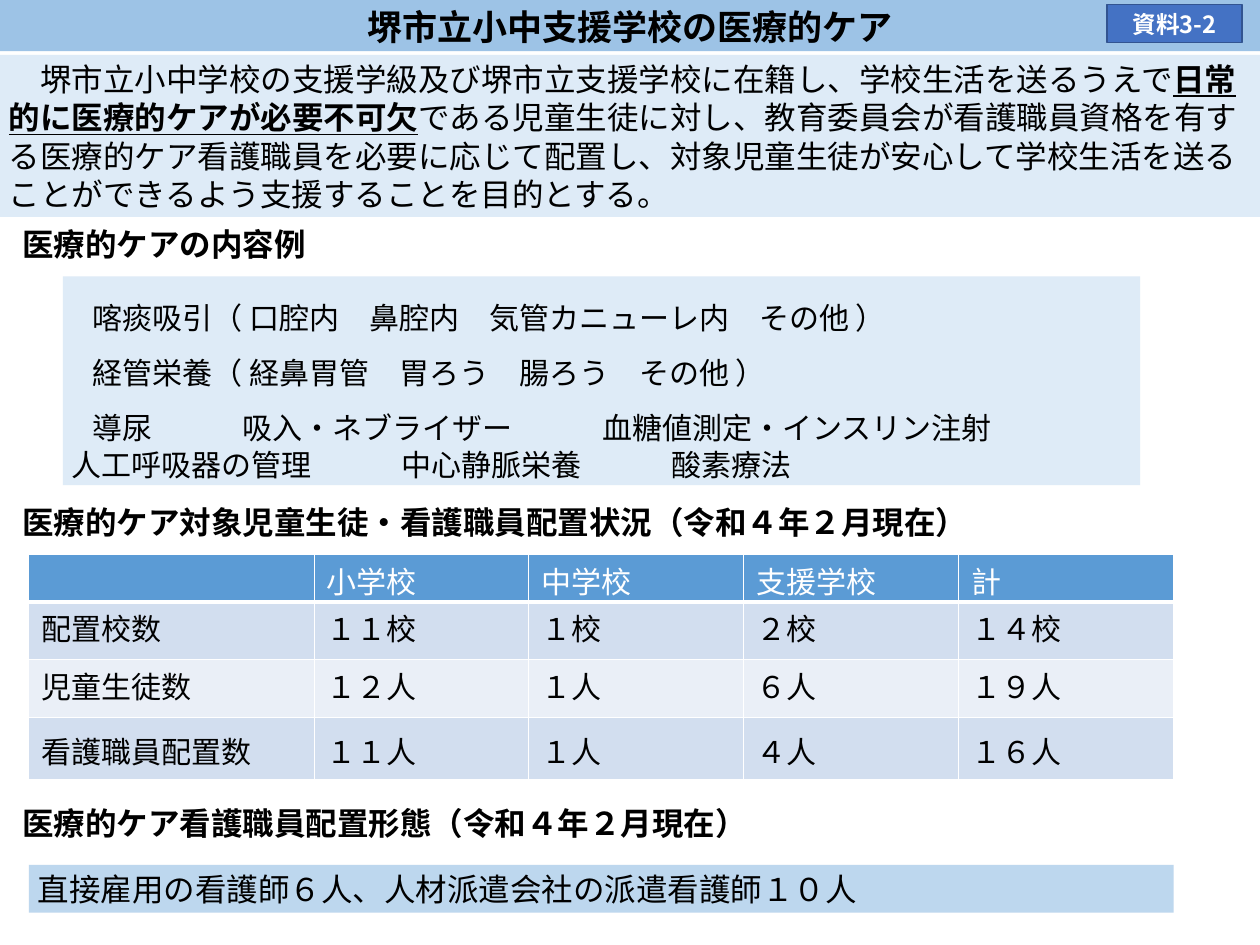
from collections import namedtuple
from lxml import etree
from pptx import Presentation
from pptx.dml.color import RGBColor
from pptx.enum.shapes import MSO_SHAPE
from pptx.enum.text import MSO_ANCHOR, PP_ALIGN
from pptx.oxml.ns import qn
from pptx.util import Inches, Pt

RECTANGLE = MSO_SHAPE.RECTANGLE
TOP, MIDDLE = MSO_ANCHOR.TOP, MSO_ANCHOR.MIDDLE
LEFT, CENTER, JUSTIFY = PP_ALIGN.LEFT, PP_ALIGN.CENTER, PP_ALIGN.JUSTIFY

# The slide is a grid of 14 columns by 10.5 rows, each one inch
COLUMNS, ROWS = 14, 10.5
FONT = "Noto Sans CJK JP"
LINE_HEIGHT = 1.22
BODY, SMALL = 25.2, 24
BLACK, WHITE = "000000", "FFFFFF"
PALE, BLUE = "DEEBF7", "5B9BD5"
BANDS = ("D2DEEF", "EAEFF7")

Box = namedtuple("Box", "left top width height")


def color(value):
    return RGBColor.from_string(value)


def place(box):
    return [Inches(length) for length in box]


def add_run(paragraph, text, size, font_color=BLACK, bold=False, underline=False):
    run = paragraph.add_run()
    run.text = text
    font = run.font
    font.name, font.size = FONT, Pt(size)
    font.bold, font.underline = bold, underline
    font.color.rgb = color(font_color)
    east_asian = etree.SubElement(run._r.get_or_add_rPr(), qn("a:ea"))
    east_asian.set("typeface", FONT)


def format_paragraph(paragraph, size, align=LEFT, lines=1):
    paragraph.alignment = align
    paragraph.line_spacing = Pt(round(size * LINE_HEIGHT * lines, 1))


def prepare_frame(frame, anchor=TOP):
    frame.word_wrap = True
    frame.vertical_anchor = anchor
    return frame


def add_panel(slide, box, fill, anchor=TOP, line=None):
    shape = slide.shapes.add_shape(RECTANGLE, *place(box))
    shape.shadow.inherit = False
    shape.fill.solid()
    shape.fill.fore_color.rgb = color(fill)
    if line:
        shape.line.color.rgb = color(line)
        shape.line.width = Pt(1)
    else:
        shape.line.fill.background()
    return prepare_frame(shape.text_frame, anchor)


def add_line(frame, text, size, align=LEFT, **style):
    paragraph = frame.paragraphs[0]
    format_paragraph(paragraph, size, align)
    add_run(paragraph, text, size, **style)


def add_heading(slide, box, text):
    frame = prepare_frame(slide.shapes.add_textbox(*place(box)).text_frame)
    add_line(frame, text, BODY, bold=True)


def add_title(slide, box):
    frame = add_panel(slide, box, "9DC3E6")
    add_line(frame, "堺市立小中支援学校の医療的ケア", 28, CENTER, bold=True)


def add_badge(slide, box):
    frame = add_panel(slide, box, "4472C4", MIDDLE, "325491")
    add_line(frame, "資料3-2", 18.9, CENTER, font_color=WHITE, bold=True)


def add_purpose(slide, box):
    paragraph = add_panel(slide, box, PALE).paragraphs[0]
    format_paragraph(paragraph, BODY)
    add_run(paragraph, "　堺市立小中学校の支援学級及び堺市立支援学校に在籍し、"
            "学校生活を送るうえで", BODY)
    add_run(paragraph, "日常的に医療的ケアが必要不可欠", BODY, bold=True, underline=True)
    add_run(paragraph, "である児童生徒に対し、教育委員会が看護職員資格を有する"
            "医療的ケア看護職員を必要に応じて配置し、対象児童生徒が安心して"
            "学校生活を送ることができるよう支援することを目的とする。", BODY)


def add_care_examples(slide, box):
    frame = add_panel(slide, box, PALE)
    indented = (
        "喀痰吸引（ 口腔内　鼻腔内　気管カニューレ内　その他 ）",
        "経管栄養（ 経鼻胃管　胃ろう　腸ろう　その他 ）",
        "導尿　　　吸入・ネブライザー　　　血糖値測定・インスリン注射",
    )
    for index, text in enumerate(indented):
        paragraph = frame.add_paragraph() if index else frame.paragraphs[0]
        format_paragraph(paragraph, SMALL, JUSTIFY, 1.5)
        paragraph._p.get_or_add_pPr().set("indent", str(Inches(0.23)))
        add_run(paragraph, text, SMALL)
    paragraph = frame.add_paragraph()
    format_paragraph(paragraph, SMALL)
    add_run(paragraph, "人工呼吸器の管理　　　中心静脈栄養　　　酸素療法", SMALL)


def set_borders(cell, widths):
    properties = cell._tc.get_or_add_tcPr()
    for side, width in widths.items():
        border = etree.SubElement(properties, qn(f"a:ln{side}"), w=str(Pt(width)))
        fill = etree.SubElement(border, qn("a:solidFill"))
        etree.SubElement(fill, qn("a:srgbClr"), val=WHITE)


def add_staffing_table(slide, box):
    rows = (
        ("", "小学校", "中学校", "支援学校", "計"),
        ("配置校数", "１１校", "１校", "２校", "１４校"),
        ("児童生徒数", "１２人", "１人", "６人", "１９人"),
        ("看護職員配置数", "１１人", "１人", "４人", "１６人"),
    )
    heights = (0.53, 0.64, 0.64, 0.69)
    label_width = 3.17
    value_width = (box.width - label_width) / (len(rows[0]) - 1)
    table = slide.shapes.add_table(len(rows), len(rows[0]), *place(box)).table
    for index, column in enumerate(table.columns):
        column.width = Inches(value_width if index else label_width)
    for row_index, texts in enumerate(rows):
        table.rows[row_index].height = Inches(heights[row_index])
        header = row_index == 0
        for column_index, text in enumerate(texts):
            cell = table.cell(row_index, column_index)
            top = 3 if row_index == 1 else 1
            set_borders(cell, {"L": 1, "R": 1, "T": top, "B": 3 if header else 1})
            cell.fill.solid()
            cell.fill.fore_color.rgb = color(BLUE if header else BANDS[(row_index - 1) % 2])
            cell.margin_left = cell.margin_right = Inches(0.14)
            cell.margin_top, cell.margin_bottom = Inches(0.12), 0
            cell.vertical_anchor = MIDDLE if row_index == len(rows) - 1 else TOP
            if text:
                add_line(cell.text_frame, text, SMALL,
                         font_color=WHITE if header else BLACK)


def add_employment(slide, box):
    frame = add_panel(slide, box, "BDD7EE")
    add_line(frame, "直接雇用の看護師６人、人材派遣会社の派遣看護師１０人", BODY)


def main():
    presentation = Presentation()
    presentation.slide_width = Inches(COLUMNS)
    presentation.slide_height = Inches(ROWS)
    slide = presentation.slides.add_slide(presentation.slide_layouts[6])

    # Title band and purpose
    add_title(slide, Box(0, 0, COLUMNS, 0.57))
    add_badge(slide, Box(12.3, 0.05, 1.5, 0.42))
    add_purpose(slide, Box(0, 0.61, COLUMNS, 1.8))

    # Section headings
    headings = (
        (2.45, "医療的ケアの内容例"),
        (5.53, "医療的ケア対象児童生徒・看護職員配置状況（令和４年２月現在）"),
        (8.88, "医療的ケア看護職員配置形態（令和４年２月現在）"),
    )
    for top, text in headings:
        add_heading(slide, Box(0.15, top, 11.06, 0.53), text)

    # Section contents
    add_care_examples(slide, Box(0.7, 3.07, 11.97, 2.32))
    add_staffing_table(slide, Box(0.32, 6.16, 12.72, 2.5))
    add_employment(slide, Box(0.32, 9.61, 12.72, 0.53))

    presentation.save("out.pptx")


if __name__ == "__main__":
    main()
